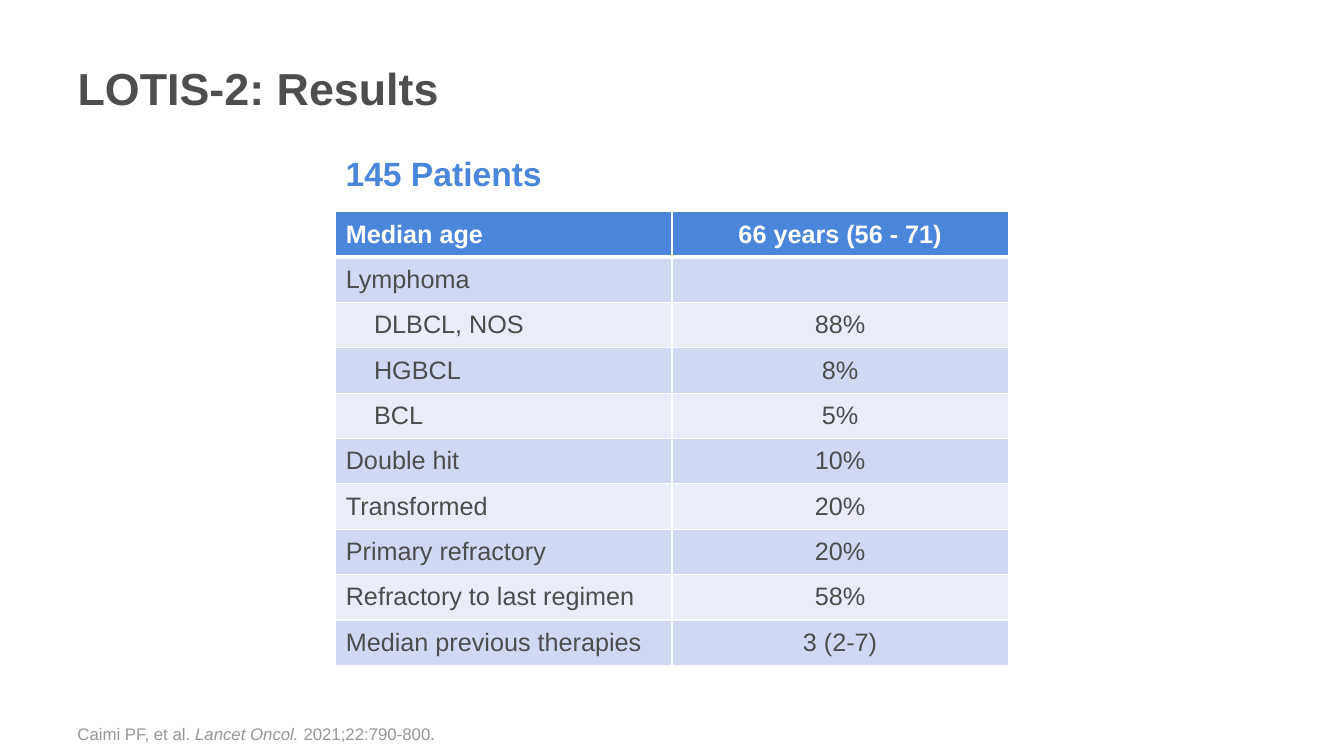
"""Build the LOTIS-2 results slide with its patient characteristics table."""
from dataclasses import dataclass

from lxml import etree
from pptx import Presentation
from pptx import util as u
from pptx.dml.color import RGBColor
from pptx.enum import text
from pptx.oxml import ns

TITLE = "LOTIS-2: Results"
SUBTITLE = "145 Patients"
CITATION = [("Caimi PF, et al. ", False), ("Lancet Oncol. ", True), ("2021;22:790-800.", False)]
ROWS = [
    ("Median age", "66 years (56 - 71)", 0),
    ("Lymphoma", "", 0),
    ("DLBCL, NOS", "88%", 1),
    ("HGBCL", "8%", 1),
    ("BCL", "5%", 1),
    ("Double hit", "10%", 0),
    ("Transformed", "20%", 0),
    ("Primary refractory", "20%", 0),
    ("Refractory to last regimen", "58%", 0),
    ("Median previous therapies", "3 (2-7)", 0),
]


@dataclass(frozen=True)
class Theme:
    """Colours, font and type sizes of the slide."""
    font: str = "Arial"
    title: str = "4D4E4D"
    accent: str = "4A86D9"
    body: str = "4D4D4D"
    muted: str = "979797"
    white: str = "FFFFFF"
    bands: tuple = ("E9EDF8", "D0D9F1")
    title_size: int = 32
    subtitle_size: int = 24
    table_size: int = 18
    citation_size: int = 12


THEME = Theme()
LEFT, WIDTH = 0.67, 11.75
TABLE_LEFT, TABLE_TOP, TABLE_WIDTH = 3.33, 2.1, 6.67
ROW_HEIGHT = 0.45
CELL_MARGIN, INDENT = 0.1, 0.28


def inches(*lengths):
    """Convert several lengths to inches."""
    return [u.Inches(length) for length in lengths]


def add_span(para, words, size, color, bold=False, italic=False):
    """Add one formatted run to a paragraph."""
    span = para.add_run()
    span.text = words
    font = span.font
    font.name, font.size = THEME.font, u.Pt(size)
    font.bold, font.italic = bold, italic
    font.color.rgb = RGBColor.from_string(color)


def add_box(page, place, anchor, wrap=True):
    """Add a text box and return its first paragraph."""
    frame = page.shapes.add_textbox(*inches(*place)).text_frame
    frame.word_wrap, frame.vertical_anchor = wrap, anchor
    return frame.paragraphs[0]


def add_border(cell, side, points):
    """Draw one white cell border."""
    properties = cell._tc.get_or_add_tcPr()
    line = etree.SubElement(properties, ns.qn(f"a:ln{side}"), w=str(u.Pt(points)))
    fill = etree.SubElement(line, ns.qn("a:solidFill"))
    etree.SubElement(fill, ns.qn("a:srgbClr"), val=THEME.white)


def fill_cell(cell, words, row, column, level):
    """Set the borders, fill and text of one table cell."""
    header = row == 0
    heavy = {(0, "B"), (1, "T")}
    for side in "LRTB":
        add_border(cell, side, 3 if (row, side) in heavy else 1)
    cell.fill.solid()
    cell.fill.fore_color.rgb = RGBColor.from_string(THEME.accent if header else THEME.bands[row % 2])
    cell.vertical_anchor = text.MSO_ANCHOR.MIDDLE
    para = cell.text_frame.paragraphs[0]
    if column == 0:
        cell.margin_left = u.Inches(CELL_MARGIN + INDENT * level)
    else:
        para.alignment = text.PP_ALIGN.CENTER
    if words:
        add_span(para, words, THEME.table_size, THEME.white if header else THEME.body, bold=header)


def add_patient_table(page):
    """Add the table of patient characteristics."""
    place = inches(TABLE_LEFT, TABLE_TOP, TABLE_WIDTH, ROW_HEIGHT * len(ROWS))
    table = page.shapes.add_table(len(ROWS), 2, *place).table
    for row, (label, value, level) in enumerate(ROWS):
        table.rows[row].height = u.Inches(ROW_HEIGHT)
        for column, words in enumerate((label, value)):
            fill_cell(table.cell(row, column), words, row, column, level)


def main():
    """Compose and save the deck."""
    deck = Presentation()
    deck.slide_width, deck.slide_height = inches(13.33, 7.5)
    page = deck.slides.add_slide(deck.slide_layouts[5])

    title = page.shapes.title
    title.left, title.top, title.width, title.height = inches(LEFT, 0.22, WIDTH, 1.3)
    frame = title.text_frame
    frame.vertical_anchor = text.MSO_ANCHOR.MIDDLE
    frame.auto_size = text.MSO_AUTO_SIZE.NONE
    frame.paragraphs[0].alignment = text.PP_ALIGN.LEFT
    add_span(frame.paragraphs[0], TITLE, THEME.title_size, THEME.title, bold=True)

    citation = add_box(page, (LEFT, 6.95, WIDTH, 0.48), text.MSO_ANCHOR.BOTTOM)
    for words, italic in CITATION:
        add_span(citation, words, THEME.citation_size, THEME.muted, italic=italic)

    add_patient_table(page)
    subtitle = add_box(page, (TABLE_LEFT, 1.47, 2.17, 0.5), text.MSO_ANCHOR.TOP, wrap=False)
    add_span(subtitle, SUBTITLE, THEME.subtitle_size, THEME.accent, bold=True)
    deck.save("out.pptx")


if __name__ == "__main__":
    main()
